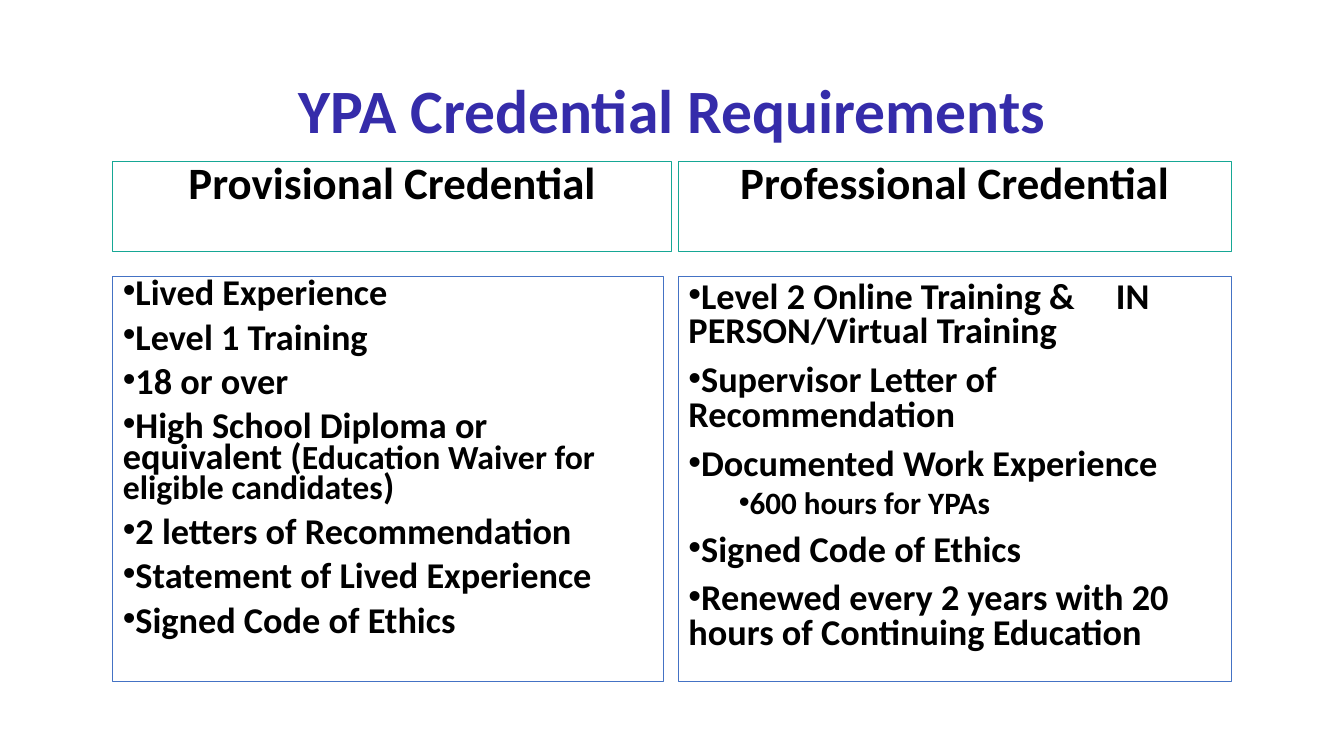
"""Build the slide that compares the two YPA credentials."""
from lxml import etree
from pptx import Presentation, util as u
from pptx.dml.color import RGBColor
from pptx.enum import shapes, text
from pptx.oxml.ns import qn

THEME = {
    "font": "Calibri", "title": "352CAA", "ink": "000000",
    "head": "16A795", "body": "4472C4",
    "big": 44, "mid": 32, "item": 25.9, "note": 24.1, "sub": 22.2,
}

deck = Presentation()
deck.slide_width, deck.slide_height = u.Inches(13.33), u.Inches(7.5)
page = deck.slides.add_slide(deck.slide_layouts[6])


def mark(para, left, tab):
    """Give a paragraph a bullet, a left margin and an optional tab stop."""
    prop = para._p.get_or_add_pPr()
    prop.set("marL", str(u.Inches(left)))
    prop.set("indent", "0")
    tint = etree.SubElement(prop, qn("a:buClr"))
    etree.SubElement(tint, qn("a:srgbClr"), val=THEME["ink"])
    etree.SubElement(prop, qn("a:buFont"), typeface="Arial")
    etree.SubElement(prop, qn("a:buChar"), char="•")
    if tab:
        stops = etree.SubElement(prop, qn("a:tabLst"))
        etree.SubElement(stops, qn("a:tab"), pos=str(u.Inches(tab)), algn="l")


def write(frame, words, size="item", color="ink", space=0.9, gap=0,
          center=False, left=None, tab=None):
    """Add one paragraph; words is a string or a list of (text, size) runs."""
    para = frame.paragraphs[0]
    if para.runs:
        para = frame.add_paragraph()
        para.space_before = u.Pt(gap)
    if left is not None:
        mark(para, left, tab)
    para.alignment = text.PP_ALIGN.CENTER if center else text.PP_ALIGN.LEFT
    para.line_spacing = space
    for part, kind in [(words, size)] if isinstance(words, str) else words:
        run = para.add_run()
        run.text = part
        run.font.name, run.font.bold = THEME["font"], True
        run.font.size = u.Pt(THEME[kind])
        run.font.color.rgb = RGBColor.from_string(THEME[color])


title = page.shapes.add_textbox(*map(u.Inches, (2.36, 0.4, 8.62, 1.45))).text_frame
title.word_wrap = True
title.vertical_anchor = text.MSO_ANCHOR.MIDDLE
write(title, "YPA Credential Requirements", size="big", color="title", center=True)

waiver = [("High School Diploma or equivalent (", "item"),
          ("Education Waiver for eligible candidates", "note"), (")", "item")]
cols = [
    (1.12, 5.54, 5.46, 0.7, "Provisional Credential", [
        "Lived Experience", "Level 1 Training", "18 or over", waiver,
        "2 letters of Recommendation", "Statement of Lived Experience",
        "Signed Code of Ethics"]),
    (6.73, 5.48, 5.48, 0.8, "Professional Credential", [
        "Level 2 Online Training &\tIN PERSON/Virtual Training",
        "Supervisor Letter of Recommendation", "Documented Work Experience",
        ("600 hours for YPAs",), "Signed Code of Ethics",
        "Renewed every 2 years with 20 hours of Continuing Education"]),
]
rows = {"head": (1.6, 0.9), "body": (2.74, 4.02)}

for x, wide, slim, space, head, items in cols:
    for row, width in (("head", wide), ("body", slim)):
        y, high = rows[row]
        box = page.shapes.add_shape(shapes.MSO_SHAPE.RECTANGLE,
                                    *map(u.Inches, (x, y, width, high)))
        box.shadow.inherit = False
        box.fill.background()
        box.line.color.rgb = RGBColor.from_string(THEME[row])
        box.line.width = u.Pt(0.75)
        frame = box.text_frame
        frame.word_wrap = True
        frame.vertical_anchor = text.MSO_ANCHOR.TOP
        if row == "head":
            frame.margin_top = 0
            write(frame, head, size="mid", center=True)
            continue
        for item in items:
            if isinstance(item, tuple):
                write(frame, item[0], size="sub", space=space, gap=5, left=0.5)
            else:
                tab = 4.24 if "\t" in item else None
                write(frame, item, space=space, gap=10, left=0, tab=tab)

deck.save("out.pptx")
